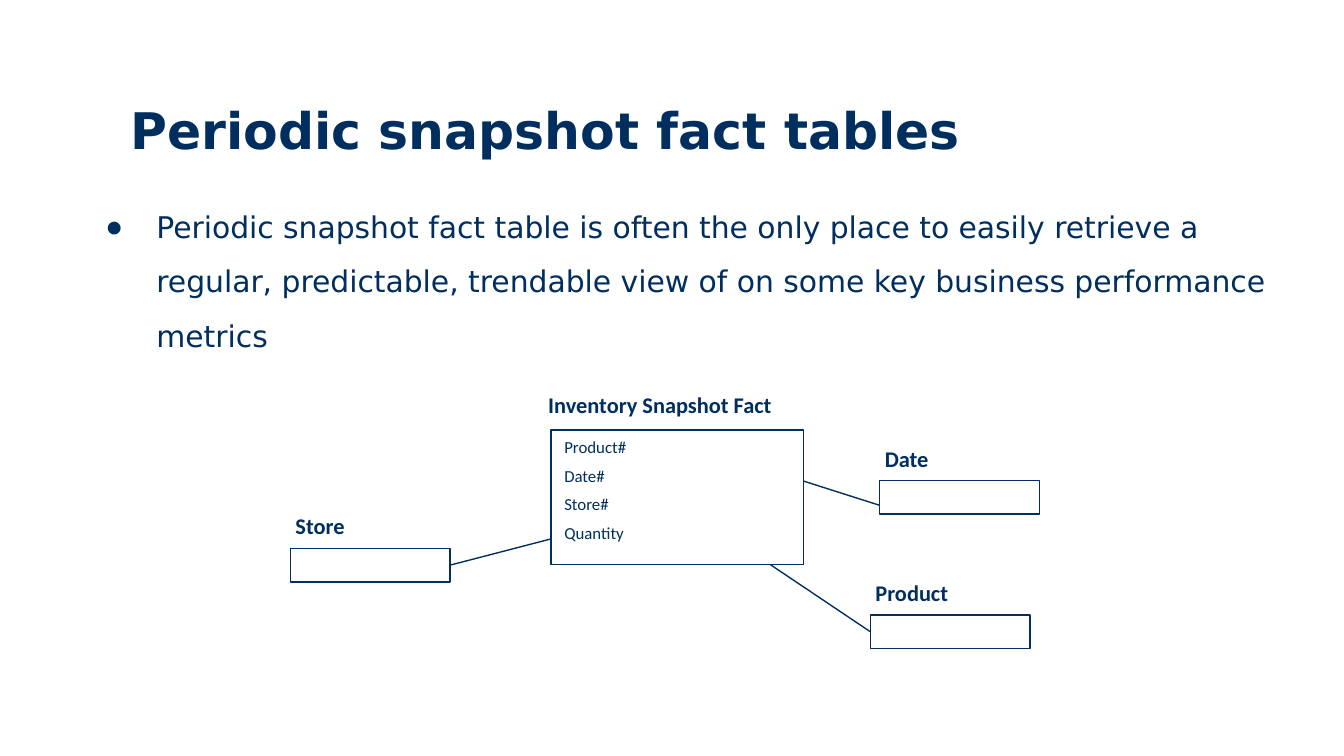
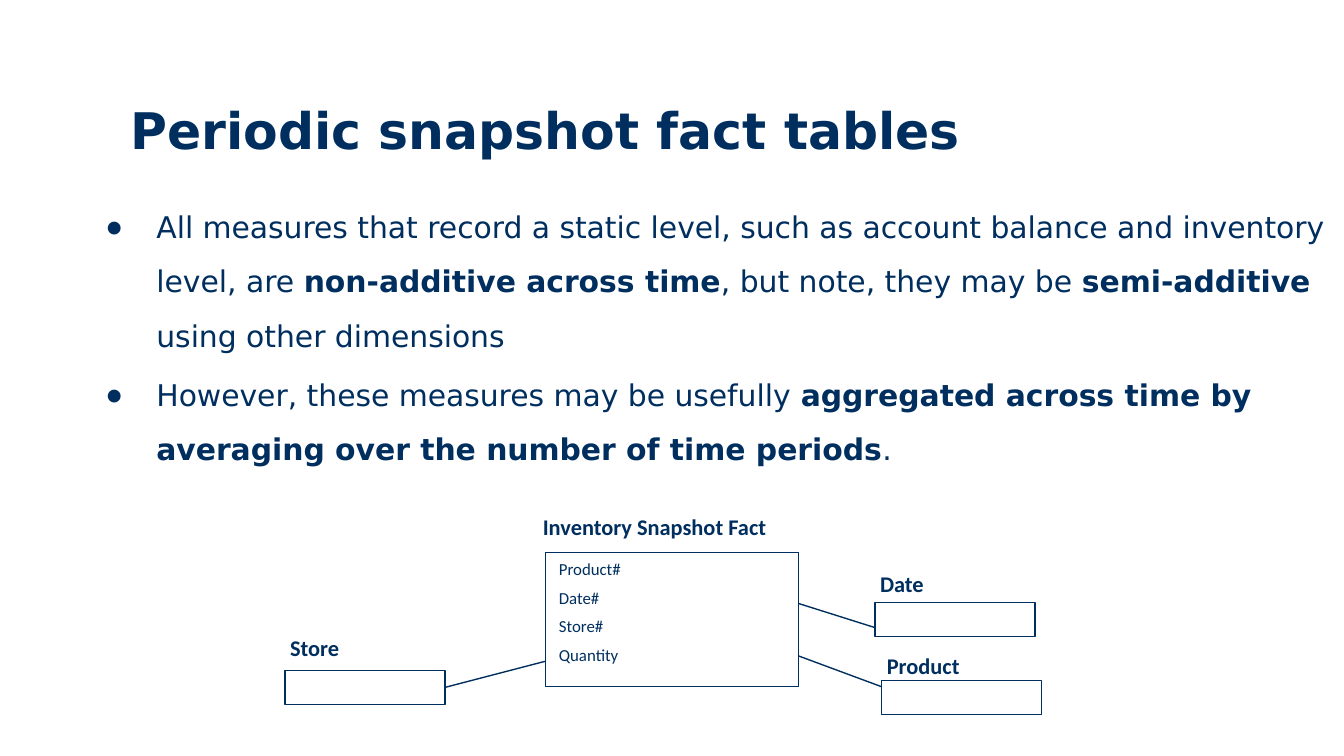
"""Build two slides on periodic snapshot fact tables."""
from dataclasses import dataclass
from typing import Optional

from lxml import etree
from pptx import Presentation
from pptx.dml.color import RGBColor
from pptx.enum.shapes import MSO_CONNECTOR, MSO_SHAPE
from pptx.enum.text import MSO_ANCHOR, MSO_AUTO_SIZE, PP_ALIGN
from pptx.oxml.ns import qn
from pptx.util import Emu, Pt

STRAIGHT = MSO_CONNECTOR.STRAIGHT
RECTANGLE = MSO_SHAPE.RECTANGLE
TOP = MSO_ANCHOR.TOP
LEFT = PP_ALIGN.LEFT
FIXED = MSO_AUTO_SIZE.NONE
LEFT_SIDE, RIGHT_SIDE = 1, 3

NAVY, WHITE = "002F5F", "FFFFFF"
HEADING_FONT, DIAGRAM_FONT = "DejaVu Sans", "Calibri"
TITLE_ONLY = 5
BOX_WIDTH, BOX_HEIGHT = 238, 50
FACT_WIDTH, FACT_HEIGHT = 376, 200

TITLE = "Periodic snapshot fact tables"
FACT_FIELDS = ["Product#", "Date#", "Store#", "Quantity"]


def px(length):
    """Turn px, 200 to the inch, into EMU."""
    return Emu(length * 4572)


def color(code):
    """Turn a hex string into a colour."""
    return RGBColor.from_string(code)


def add_bullet(paragraph, indent):
    """Give a paragraph a hanging round bullet."""
    properties = paragraph._p.get_or_add_pPr()
    properties.set("marL", str(px(indent)))
    properties.set("indent", str(-px(indent)))
    for tag, key, value in (("a:buSzPct", "val", "93000"),
                            ("a:buFont", "typeface", DIAGRAM_FONT),
                            ("a:buChar", "char", "●")):
        etree.SubElement(properties, qn(tag)).set(key, value)


def write(frame, paragraphs, size=12, font=DIAGRAM_FONT, bold=False,
          before=0, line=None, indent=0):
    """Fill a text frame; double asterisks enclose bold words."""
    frame.word_wrap = True
    frame.auto_size = FIXED
    frame.vertical_anchor = TOP
    frame.margin_left = frame.margin_right = px(20)
    frame.margin_top = frame.margin_bottom = px(10)
    for index, content in enumerate(paragraphs):
        paragraph = frame.add_paragraph() if index else frame.paragraphs[0]
        paragraph.alignment = LEFT
        if indent:
            add_bullet(paragraph, indent)
        paragraph.space_before = Pt(before if index else 0)
        if line:
            paragraph.line_spacing = Pt(line)
        for part, words in enumerate(content.split("**")):
            run = paragraph.add_run()
            run.text = words
            run.font.name = font
            run.font.size = Pt(size)
            run.font.bold = bold or part % 2 == 1
            run.font.color.rgb = color(NAVY)


@dataclass
class Dimension:
    """A dimension table placed relative to the fact table."""
    name: str
    x: int
    y: int
    rise: int
    start: tuple
    end: tuple
    side: Optional[int] = None


class Deck:
    """Hold the presentation's style and its current slide."""

    def __init__(self):
        """Start an empty presentation."""
        self.presentation = Presentation()
        self.presentation.slide_width = px(2000)
        self.presentation.slide_height = px(1125)
        self.slide = None

    def add_slide(self, title):
        """Add a slide with its title."""
        layout = self.presentation.slide_layouts[TITLE_ONLY]
        self.slide = self.presentation.slides.add_slide(layout)
        self.slide.background.fill.solid()
        self.slide.background.fill.fore_color.rgb = color(WHITE)
        heading = self.slide.shapes.title
        heading.left, heading.top = px(174), px(138)
        heading.width, heading.height = px(1498), px(130)
        write(heading.text_frame, [title], size=27, font=HEADING_FONT,
              bold=True)

    def text(self, x, y, width, height, paragraphs, **style):
        """Add a text box."""
        area = self.slide.shapes.add_textbox(
            px(x), px(y), px(width), px(height))
        write(area.text_frame, paragraphs, **style)

    def bullets(self, points, width):
        """Add the bulleted body."""
        self.text(138, 274, width, 560, points, size=16, font=HEADING_FONT,
                  before=3, line=29, indent=75)

    def table_box(self, x, y, width, height):
        """Add the outlined rectangle that stands for a table."""
        box = self.slide.shapes.add_shape(
            RECTANGLE, px(x), px(y), px(width), px(height))
        box.shadow.inherit = False
        box.fill.solid()
        box.fill.fore_color.rgb = color(WHITE)
        box.line.color.rgb = color(NAVY)
        box.line.width = Pt(0.75)
        return box

    def label(self, x, y, name):
        """Add a table's name."""
        self.text(x, y, 438, 60, [name], bold=True)

    def link(self, start, end, box, side):
        """Draw a line, joined to a box where a side is given."""
        line = self.slide.shapes.add_connector(
            STRAIGHT, *(px(value) for value in (*start, *end)))
        if side is not None:
            line.begin_connect(box, side)
        line.line.color.rgb = color(NAVY)
        line.line.width = Pt(0.75)
        etree.SubElement(line._element.spPr, qn("a:effectLst"))

    def star_schema(self, x, y, dimensions):
        """Draw the fact table and the dimensions around it."""
        self.table_box(x, y, FACT_WIDTH, FACT_HEIGHT)
        self.label(x - 24, y - 68, "Inventory Snapshot Fact")
        self.text(x, y, 350, 232, FACT_FIELDS, size=9, before=4.5)
        for table in dimensions:
            left, top = x + table.x, y + table.y
            box = self.table_box(left, top, BOX_WIDTH, BOX_HEIGHT)
            self.label(left - 12, top - table.rise, table.name)
            start = left + table.start[0], top + table.start[1]
            end = x + table.end[0], y + table.end[1]
            self.link(start, end, box, table.side)


def main():
    """Build and save the slides."""
    deck = Deck()
    store = Dimension("Store", -388, 176, 64, (BOX_WIDTH, 25), (0, 162),
                      RIGHT_SIDE)

    deck.add_slide(TITLE)
    deck.bullets([
        "Periodic snapshot fact table is often the only place to easily "
        "retrieve a regular, predictable, trendable view of on some key "
        "business performance metrics",
    ], width=1796)
    deck.star_schema(820, 640, [
        Dimension("Date", 489, 75, 63, (0, 37), (FACT_WIDTH, 76)),
        Dimension("Product", 475, 275, 63, (0, 25), (326, FACT_HEIGHT),
                  LEFT_SIDE),
        store,
    ])

    deck.add_slide(TITLE)
    deck.bullets([
        "All measures that record a static level, such as account balance "
        "and inventory level, are **non-additive across time**, but note, "
        "they may be **semi-additive **using other dimensions",
        "However, these measures may be usefully **aggregated across time "
        "by averaging over the number of time periods**.",
    ], width=1862)
    deck.star_schema(812, 822, [
        Dimension("Date", 490, 75, 59, (0, 37), (FACT_WIDTH, 76)),
        Dimension("Product", 500, 191, 53, (0, 9), (FACT_WIDTH, 154)),
        store,
    ])
    deck.presentation.save("out.pptx")


if __name__ == "__main__":
    main()
